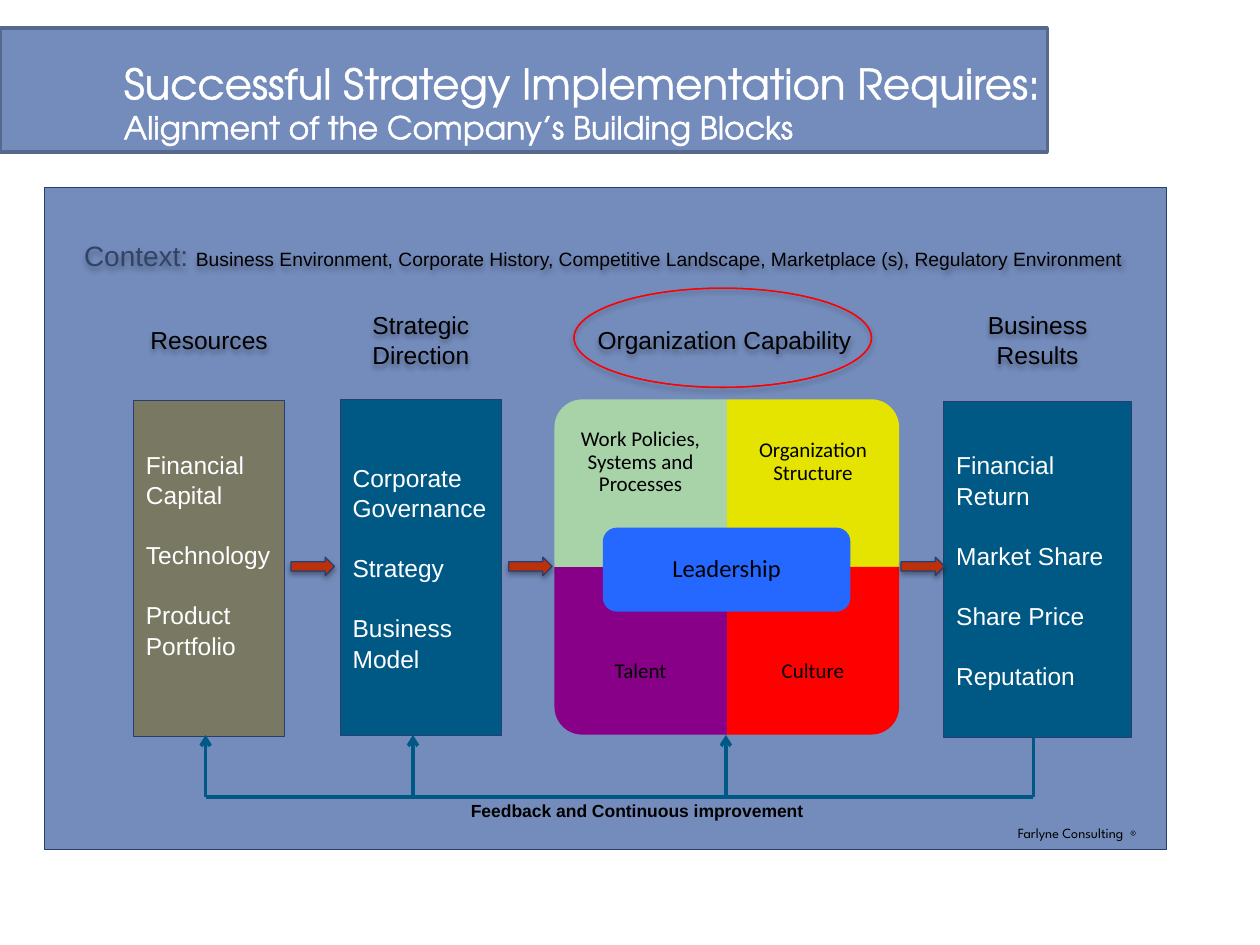
import pptx
import pptx.util
import pptx.dml.color
import pptx.enum.shapes
import pptx.enum.text
import pptx.oxml
import pptx.oxml.ns

Pt = pptx.util.Pt
Kind = pptx.enum.shapes.MSO_SHAPE
Align = pptx.enum.text.PP_ALIGN
Anchor = pptx.enum.text.MSO_ANCHOR
COLORS = {
    "panel": "748CBC", "band_edge": "56688B", "edge": "263F70", "teal": "005984",
    "olive": "787863", "green": "A8D2A8", "yellow": "E4E400", "purple": "870087",
    "red": "FF0000", "blue": "2468FF", "arrow": "BC300A", "context": "314367",
    "black": "000000", "white": "FFFFFF",
}
NAMESPACE = pptx.oxml.ns.nsdecls("a")
SHADOW = (f'<a:effectLst {NAMESPACE}><a:outerShdw blurRad="39370" dist="22860" dir="5400000" '
          'rotWithShape="0"><a:srgbClr val="000000"><a:alpha val="35000"/></a:srgbClr>'
          '</a:outerShdw></a:effectLst>')


class Painter:
    """Holds the style and the current slide, and draws each kind of element."""

    def __init__(self, page):
        self.page = page

    def color(self, name):
        return pptx.dml.color.RGBColor.from_string(COLORS[name])

    def style(self, span, size, color, font="Arial", bold=False):
        span.font.size = Pt(size)
        span.font.name = font
        span.font.bold = bold
        span.font.color.rgb = self.color(color)

    def title(self, lines, sizes, frame, indent):
        box = self.page.shapes.title
        box.left, box.top, box.width, box.height = map(Pt, frame)
        box.text_frame.text = "\v".join(lines)
        box.text_frame.vertical_anchor = Anchor.MIDDLE
        para = box.text_frame.paragraphs[0]
        para.alignment = Align.LEFT
        para._p.get_or_add_pPr().set("marL", str(Pt(indent)))
        for span, size in zip(para.runs, sizes):
            self.style(span, size, "white", "TeX Gyre Adventor")
            span._r.get_or_add_rPr().insert(0, pptx.oxml.parse_xml(
                f'<a:ln {NAMESPACE} w="18415"><a:solidFill><a:srgbClr val="FFFFFF"/>'
                '</a:solidFill></a:ln>'))

    def shape(self, kind, frame, fill=None, edge=None, weight=0.75, shadow=False, turn=0):
        box = self.page.shapes.add_shape(kind, *map(Pt, frame))
        box.rotation = turn
        box.shadow.inherit = False
        if fill:
            box.fill.solid()
            box.fill.fore_color.rgb = self.color(fill)
        else:
            box.fill.background()
        if edge:
            box.line.color.rgb = self.color(edge)
            box.line.width = Pt(weight)
        else:
            box.line.fill.background()
        if shadow:
            effects = box._element.spPr.find(pptx.oxml.ns.qn("a:effectLst"))
            effects.getparent().replace(effects, pptx.oxml.parse_xml(SHADOW))
        return box

    def set_text(self, box, lines, size, color, font="Arial", align=Align.CENTER,
                 spacing=1.0, gap=0, bold=False, anchor=Anchor.MIDDLE, wrap=True):
        frame = box.text_frame
        frame.text = "\n".join(lines)
        frame.word_wrap = wrap
        frame.vertical_anchor = anchor
        for number, para in enumerate(frame.paragraphs):
            para.alignment = align
            para.line_spacing = spacing
            para.space_before = Pt(gap if number else 0)
            for span in para.runs:
                self.style(span, size, color, font, bold)

    def column(self, frame, fill, lines, bottom=3.6):
        box = self.shape(Kind.RECTANGLE, frame, fill, "edge")
        box.text_frame.margin_bottom = Pt(bottom)
        self.set_text(box, lines, 14, "white", align=Align.LEFT, spacing=1.04, gap=16.8)

    def heading(self, frame, text):
        box = self.shape(Kind.FLOWCHART_OFFPAGE_CONNECTOR, frame, shadow=True)
        self.set_text(box, [text], 14, "black", spacing=1.04)
        return box

    def label(self, frame, text, size, font, inset=None, **options):
        box = self.page.shapes.add_textbox(*map(Pt, frame))
        if inset is not None:
            text_frame = box.text_frame
            text_frame.margin_left = text_frame.margin_right = Pt(inset)
            text_frame.margin_top = text_frame.margin_bottom = Pt(inset)
        self.set_text(box, [text], size, "black", font, **options)

    def line(self, start, end, arrow=False):
        link = self.page.shapes.add_connector(
            pptx.enum.shapes.MSO_CONNECTOR.STRAIGHT, *map(Pt, start + end))
        link.line.color.rgb = self.color("teal")
        link.line.width = Pt(2)
        if arrow:
            link.line._get_or_add_ln().append(
                pptx.oxml.parse_xml(f'<a:tailEnd {NAMESPACE} type="arrow"/>'))
        link._element.spPr.append(pptx.oxml.parse_xml(f"<a:effectLst {NAMESPACE}/>"))


def main():
    """Builds the slide and saves it."""
    deck = pptx.Presentation()
    deck.slide_width, deck.slide_height = Pt(720), Pt(540)
    page = deck.slides.add_slide(deck.slide_layouts[5])
    paint = Painter(page)

    band = paint.shape(Kind.RECTANGLE, (0, 16, 598.5, 71), "panel", "band_edge", 2)
    page.shapes.title._element.addprevious(band._element)
    paint.title(["Successful Strategy Implementation Requires:",
                 "Alignment of the Company’s Building Blocks"],
                (24, 18), (0.5, 27.5, 680, 61), 63)
    paint.shape(Kind.RECTANGLE, (25.6, 107.3, 641, 378), "panel", "edge")

    context = paint.heading((41, 127.4, 641, 45.4), "Context: ")
    para = context.text_frame.paragraphs[0]
    para.alignment = Align.LEFT
    paint.style(para.runs[0], 16, "context")
    detail = para.add_run()
    detail.text = ("Business Environment, Corporate History, Competitive Landscape, "
                   "Marketplace (s), Regulatory Environment")
    paint.style(detail, 11, "black")

    for left, width, text in ((76.3, 86.4, "Resources"), (194.4, 92.2, "Strategic Direction"),
                              (315.4, 197.3, "Organization Capability"),
                              (539.3, 107.3, "Business Results")):
        paint.heading((left, 175.7, width, 45.4), text)

    paint.column((76.3, 229, 86.4, 192), "olive",
                 ["Financial Capital", "Technology", "Product Portfolio"], bottom=20)
    paint.column((194.4, 228.3, 92.2, 192), "teal",
                 ["Corporate Governance", "Strategy", "Business Model"])
    paint.column((539.3, 229.5, 107.3, 192), "teal",
                 ["Financial Return", "Market Share", "Share Price", "Reputation"])

    left, top, width, height = 316.8, 228.2, 98.5, 95.8
    quadrants = ((0, 0, 270, "green", "Work Policies, Systems and Processes"),
                 (1, 0, 0, "yellow", "Organization Structure"),
                 (0, 1, 180, "purple", "Talent"), (1, 1, 90, "red", "Culture"))
    for column, row, turn, fill, text in quadrants:
        x, y = left + column * width, top + row * height
        wide, tall = (height, width) if turn % 180 else (width, height)
        paint.shape(Kind.ROUND_1_RECTANGLE,
                    (x + (width - wide) / 2, y + (height - tall) / 2, wide, tall),
                    fill, turn=turn)
        paint.label((x, y + row * height / 4, width, height * 0.75), text, 12, "Calibri",
                    inset=6.5, spacing=0.9)
    leadership = paint.shape(Kind.ROUNDED_RECTANGLE, (344.5, 301.5, 141.5, 48), "blue")
    paint.set_text(leadership, ["Leadership"], 14, "black", "Calibri", spacing=0.9)

    for x in (166.3, 290.7, 514.9):
        paint.shape(Kind.RIGHT_ARROW, (x, 318.4, 24.8, 10.6), "arrow", "edge", shadow=True)

    ring = paint.shape(Kind.DONUT, (328, 164.7, 170, 56.7), edge="red", shadow=True)
    ring.adjustments[0] = 0

    plain = {"align": Align.LEFT, "anchor": Anchor.TOP, "wrap": False}
    paint.label((643, 468.5, 10, 16), "®", 8, "League Spartan", **plain)
    paint.label((574.5, 467.5, 80.6, 16), "Farlyne Consulting", 8, "League Spartan", **plain)
    paint.label((262, 453.8, 206.6, 19.4), "Feedback and Continuous improvement", 10, "Arial",
                bold=True, **plain)

    base, tip, right = 455.5, 420, 590.5
    feedback = (117.5, 236, 414.8)
    paint.line((right, base), (feedback[0], base))
    paint.line((right, 421.5), (right, base))
    for x in feedback:
        paint.line((x, base), (x, tip), arrow=True)

    deck.save("out.pptx")


if __name__ == "__main__":
    main()
